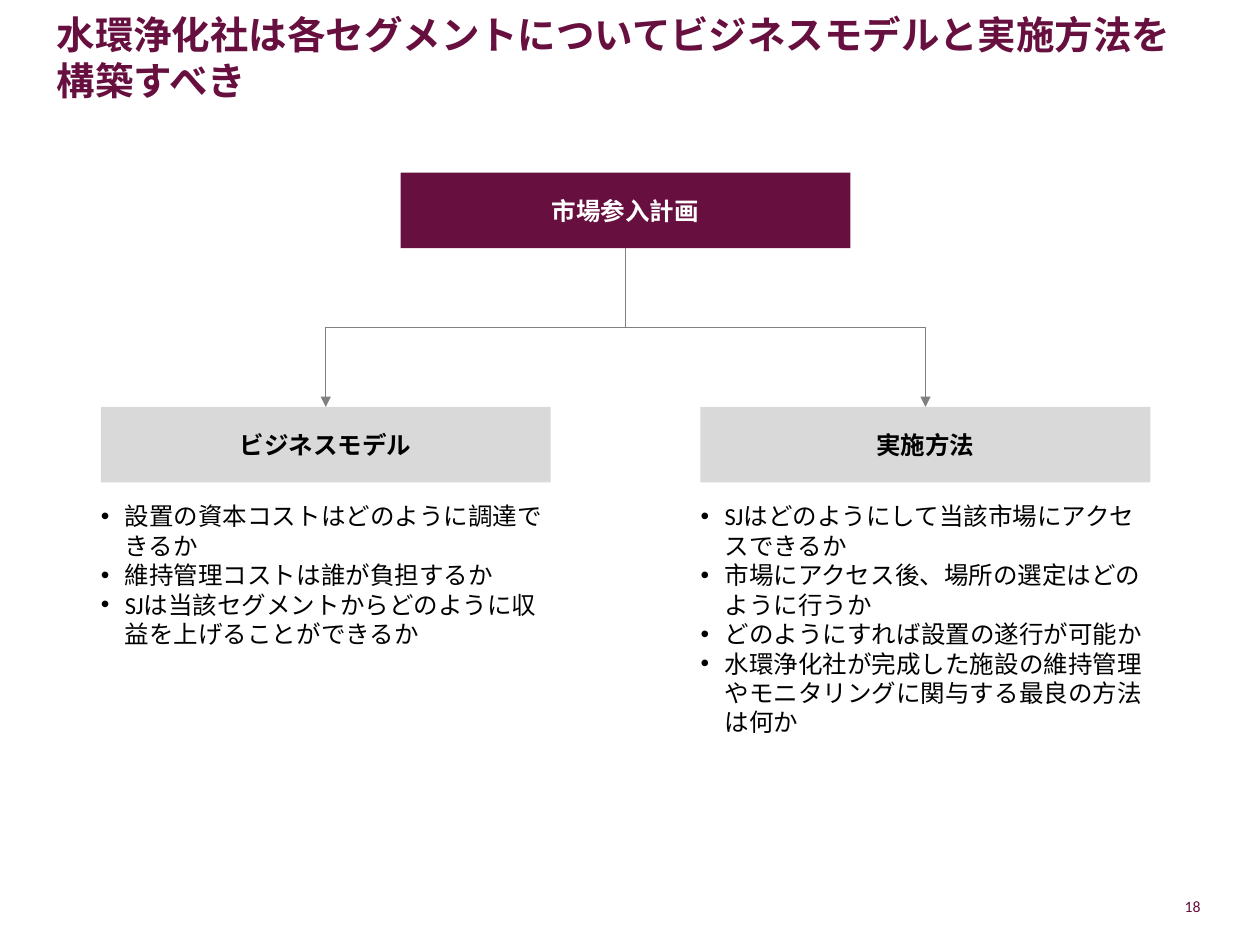
from dataclasses import dataclass

from lxml import etree
from pptx import Presentation
from pptx.dml.color import RGBColor
from pptx.enum.shapes import MSO_CONNECTOR, MSO_SHAPE
from pptx.enum.text import MSO_ANCHOR, MSO_AUTO_SIZE, PP_ALIGN
from pptx.oxml.ns import qn
from pptx.util import Inches, Pt

ELBOW, RECT = MSO_CONNECTOR.ELBOW, MSO_SHAPE.RECTANGLE
LEFT, CENTER, RIGHT = PP_ALIGN.LEFT, PP_ALIGN.CENTER, PP_ALIGN.RIGHT
TOP, MIDDLE, BOTTOM = MSO_ANCHOR.TOP, MSO_ANCHOR.MIDDLE, MSO_ANCHOR.BOTTOM
NO_FIT = MSO_AUTO_SIZE.NONE

WINE = RGBColor(0x67, 0x10, 0x3F)
SILVER = RGBColor(0xD9, 0xD9, 0xD9)
GRAY = RGBColor(0x80, 0x80, 0x80)
WHITE = RGBColor(0xFF, 0xFF, 0xFF)
BLACK = RGBColor(0, 0, 0)
FONT = "Calibri"

# Grid: boxes span three columns and start at every second one
MARGIN, COL, SPAN = 0.8, 1.19, 3
BOX_W, BOX_H = SPAN * COL, 0.6
ROOT_TOP, BRANCH_TOP, LIST_TOP = 1.37, 3.23, 3.98
ROOT_COL = 2
INDENT = 0.19


@dataclass
class Branch:
    col: int
    heading: str
    list_height: float
    questions: list[str]


BRANCHES = [
    Branch(0, "ビジネスモデル", 1.21, [
        "設置の資本コストはどのように調達できるか",
        "維持管理コストは誰が負担するか",
        "SJは当該セグメントからどのように収益を上げることができるか",
    ]),
    Branch(4, "実施方法", 1.67, [
        "SJはどのようにして当該市場にアクセスできるか",
        "市場にアクセス後、場所の選定はどのように行うか",
        "どのようにすれば設置の遂行が可能か",
        "水環浄化社が完成した施設の維持管理やモニタリングに関与する最良の方法は何か",
    ]),
]


def col_x(col: float) -> float:
    return MARGIN + col * COL


def place(s, x: float, y: float, w: float, h: float) -> None:
    s.left, s.top, s.width, s.height = (Inches(v) for v in (x, y, w, h))


def write(s, lines: list[str], size: float, color: RGBColor, align=LEFT,
          anchor=TOP, bold: bool = False, bullets: bool = False) -> None:
    tf = s.text_frame
    tf.word_wrap, tf.auto_size, tf.vertical_anchor = True, NO_FIT, anchor
    tf.margin_left = tf.margin_right = tf.margin_top = tf.margin_bottom = 0
    tf.text = "\n".join(lines)
    for p in tf.paragraphs:
        if bullets:
            add_bullet(p)
        p.alignment = align
        p.space_before = Pt(0)
        for r in p.runs:
            r.font.name, r.font.size, r.font.bold = FONT, Pt(size), bold
            r.font.color.rgb = color
            # Japanese characters take the East Asian typeface
            ea = etree.SubElement(r.font._element, qn("a:ea"))
            ea.set("typeface", FONT)


def add_bullet(p) -> None:
    pPr = p._p.get_or_add_pPr()
    pPr.set("marL", str(Inches(INDENT)))
    pPr.set("indent", str(-Inches(INDENT)))
    etree.SubElement(pPr, qn("a:buFont")).set("typeface", "Arial")
    etree.SubElement(pPr, qn("a:buChar")).set("char", "•")


def add_box(slide, col: int, y: float, text: str, fill: RGBColor, color: RGBColor) -> None:
    s = slide.shapes.add_shape(RECT, 0, 0, 0, 0)
    place(s, col_x(col), y, BOX_W, BOX_H)
    s.shadow.inherit = False
    s.fill.solid()
    s.fill.fore_color.rgb = fill
    s.line.fill.background()
    write(s, [text], 14, color, CENTER, MIDDLE, bold=True)


def add_arrow(slide, col: int) -> None:
    """Draw an elbow from the root box down to a branch box."""
    x1, x2 = (col_x(c + SPAN / 2) for c in (ROOT_COL, col))
    y1, y2 = ROOT_TOP + BOX_H, BRANCH_TOP
    drop, run = y2 - y1, abs(x2 - x1)
    mid_x, mid_y = (x1 + x2) / 2, (y1 + y2) / 2
    # The elbow starts out sideways, so a quarter turn makes it start downwards
    side = 1 if x2 > x1 else -1
    c = slide.shapes.add_connector(
        ELBOW,
        Inches(mid_x + side * drop / 2), Inches(mid_y - run / 2),
        Inches(mid_x - side * drop / 2), Inches(mid_y + run / 2))
    spPr = c._element.spPr
    spPr.find(qn("a:xfrm")).set("rot", str((270 if side > 0 else 90) * 60000))
    c.line.color.rgb = GRAY
    c.line.width = Pt(0.75)
    etree.SubElement(c.line._get_or_add_ln(), qn("a:tailEnd")).set("type", "triangle")
    etree.SubElement(spPr, qn("a:effectLst"))


def main() -> None:
    prs = Presentation()
    prs.slide_width, prs.slide_height = Inches(10), Inches(7.5)
    slide = prs.slides.add_slide(prs.slide_layouts[3])
    title, *bodies = slide.placeholders

    # Title
    place(title, 0.45, 0.15, 9.09, 0.67)
    write(title, ["水環浄化社は各セグメントについてビジネスモデルと実施方法を構築すべき"],
          22, WINE, anchor=BOTTOM, bold=True)

    # Tree with a question list under each branch
    add_box(slide, ROOT_COL, ROOT_TOP, "市場参入計画", WINE, WHITE)
    for branch, body in zip(BRANCHES, bodies):
        add_box(slide, branch.col, BRANCH_TOP, branch.heading, SILVER, BLACK)
        add_arrow(slide, branch.col)
        place(body, col_x(branch.col), LIST_TOP, BOX_W, branch.list_height)
        write(body, branch.questions, 14, BLACK, bullets=True)

    # Page number
    number = slide.shapes.add_textbox(0, 0, 0, 0)
    place(number, 8.8, 7.03, 0.73, 0.32)
    write(number, ["18"], 9, WINE, RIGHT, MIDDLE)

    prs.save("out.pptx")


if __name__ == "__main__":
    main()
